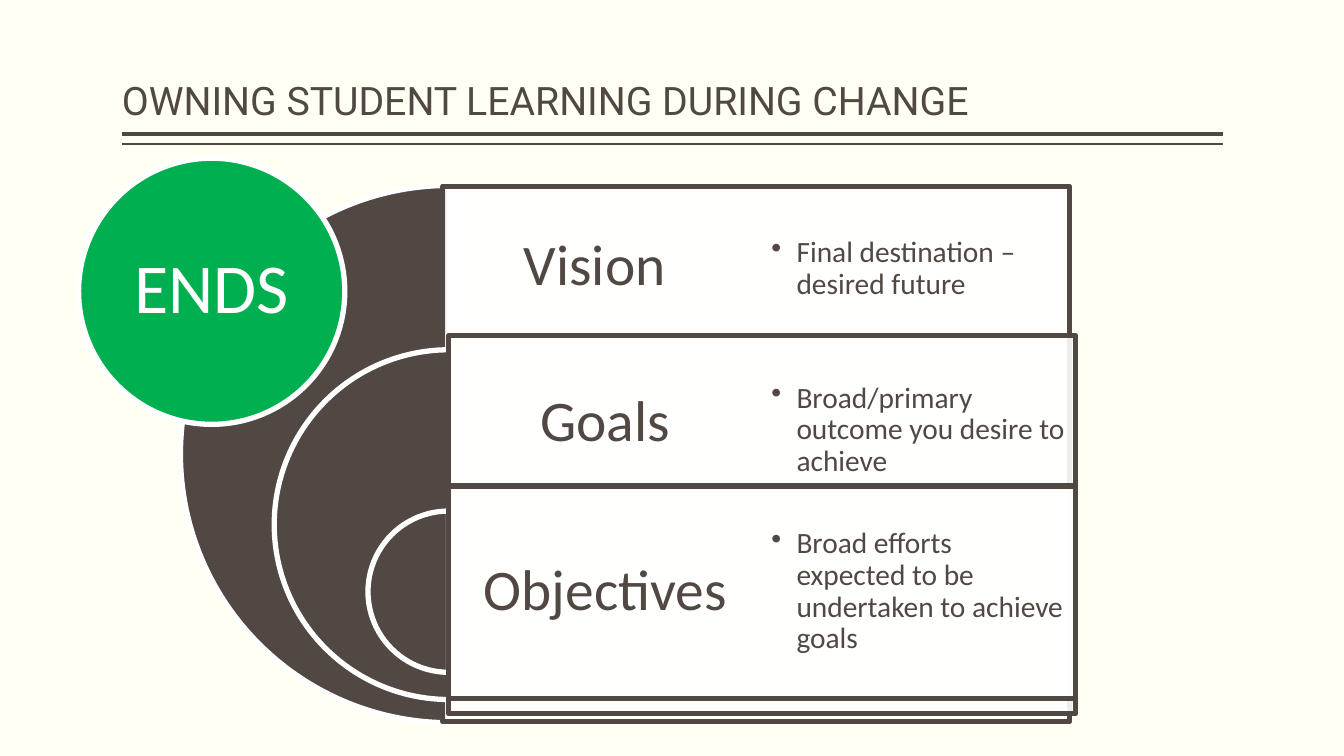
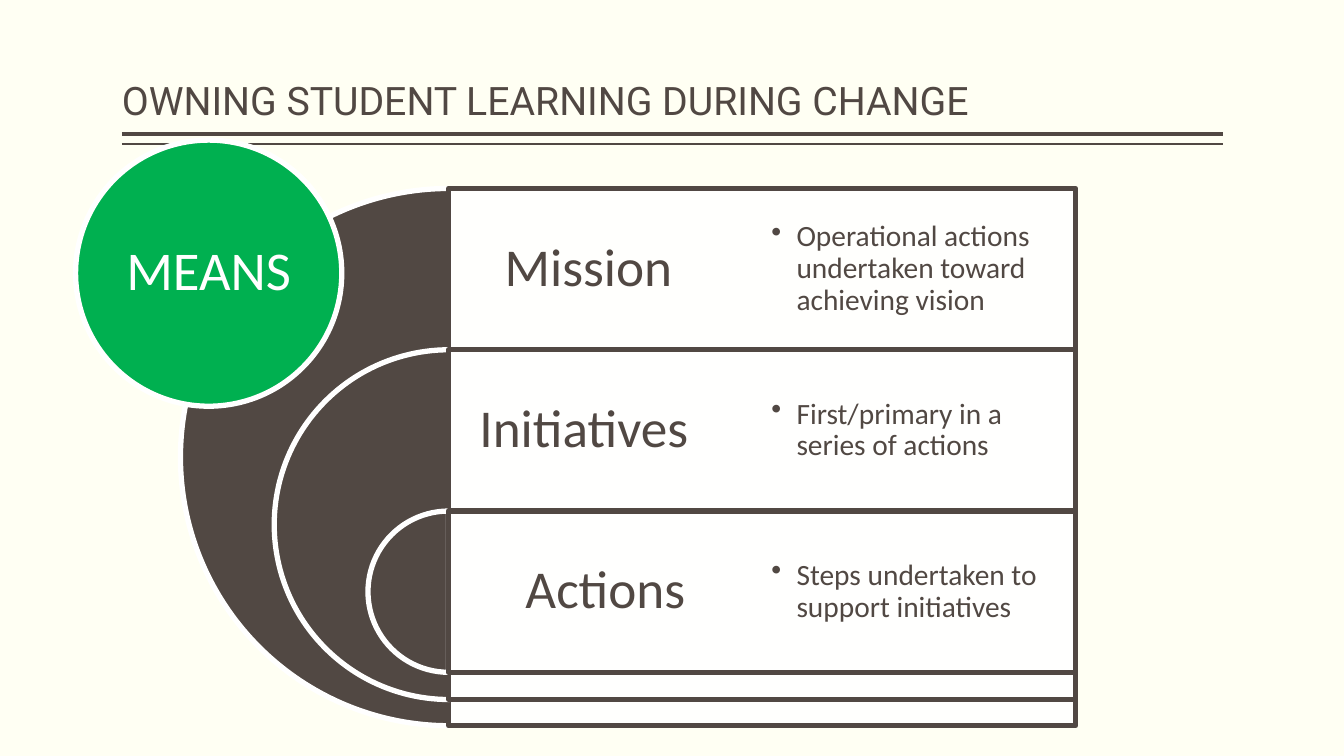
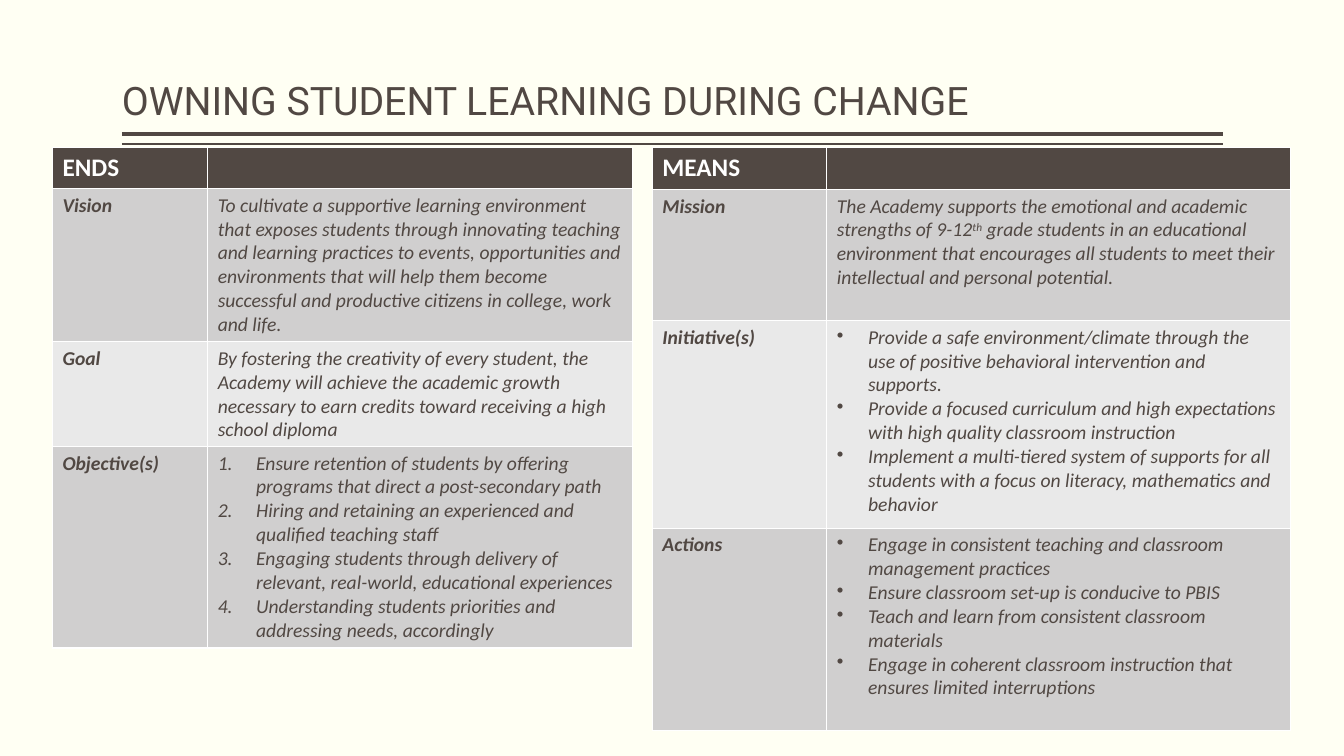
from lxml import etree
from pptx import Presentation
from pptx import util as u
from pptx.dml.color import RGBColor
from pptx.enum import shapes, text
from pptx.oxml.ns import qn

PX = 9144  # 100 px to the inch
CREAM = RGBColor(0xFF, 0xFF, 0xF3)
BROWN = RGBColor(0x51, 0x48, 0x43)
WHITE = RGBColor(0xFF, 0xFF, 0xFF)
GREEN = RGBColor(0x00, 0xB0, 0x50)
DARK = RGBColor(0xD0, 0xCF, 0xCF)
LIGHT = RGBColor(0xE9, 0xE9, 0xE9)

TITLE = "OWNING STUDENT LEARNING DURING CHANGE"
LEFT, RIGHT = 121, 1213
EDGE = 3.78
DOT = ("buChar", {"char": "•"})
NUM = ("buAutoNum", {"type": "arabicPeriod"})
SHAPE = shapes.MSO_SHAPE
ALIGN = text.PP_ALIGN
ANCHOR = text.MSO_ANCHOR

# Wheel geometry: nested pies that share a right-hand centre line
AXIS, TOP, STEP = 445, 187, 160
SIZES = (533, 347, 160)
WIDE, HALF = 622, 311


def px(*nums):
    return [u.Emu(n * PX) for n in nums]


def put(obj, vals):
    for key, val in vals.items():
        setattr(obj, key, val)


def style(size, color=BROWN, name="Calibri", **more):
    return {"size": u.Pt(size), "color": color, "name": name, **more}


def bullet(par, mark, gap):
    props = par._p.get_or_add_pPr()
    props.set("marL", str(gap * PX))
    props.set("indent", str(-gap * PX))
    tag, attrs = mark
    etree.SubElement(props, qn("a:" + tag), attrs)


def write(frame, lines, font, para=None, mark=None, gap=0):
    """Fill a frame; text between two ^ signs is superscript."""
    font = dict(font)
    color = font.pop("color")
    for i, line in enumerate(lines):
        par = frame.paragraphs[0] if i == 0 else frame.add_paragraph()
        put(par, para or {})
        if mark:
            bullet(par, mark, gap)
        for j, part in enumerate(line.split("^")):
            run = par.add_run()
            run.text = part
            put(run.font, font)
            run.font.color.rgb = color
            if j % 2:
                run._r.get_or_add_rPr().set("baseline", "30000")


def frame_of(shape, side, edge, anchor):
    frame = shape.text_frame
    put(frame, {"word_wrap": True, "vertical_anchor": anchor})
    put(frame, dict(zip(("margin_left", "margin_right", "margin_top", "margin_bottom"),
                        px(side, side, edge, edge))))
    return frame


def label(slide, box, lines, font, pad=(0, 5), anchor=ANCHOR.MIDDLE, align=ALIGN.LEFT, **more):
    shape = slide.shapes.add_textbox(*px(*box))
    write(frame_of(shape, *pad, anchor), lines, font,
          {"alignment": align, "line_spacing": 0.9}, **more)


def block(slide, kind, box, fill, line, alpha=None):
    shape = slide.shapes.add_shape(kind, *px(*box))
    shape.shadow.inherit = False
    shape.fill.solid()
    shape.fill.fore_color.rgb = fill
    shape.line.color.rgb = line
    shape.line.width = u.Pt(EDGE)
    if alpha:
        color = shape._element.spPr.find(qn("a:solidFill"))[0]
        etree.SubElement(color, qn("a:alpha"), val=str(alpha * 1000))
    return shape


def rule(slide, y, width):
    line = slide.shapes.add_connector(shapes.MSO_CONNECTOR.STRAIGHT, *px(LEFT, y, RIGHT, y))
    line.line.color.rgb = BROWN
    line.line.width = u.Pt(width)
    etree.SubElement(line._element.spPr, qn("a:effectLst"))


def page(deck):
    """New slide with the shared double rule and title."""
    slide = deck.slides.add_slide(deck.slide_layouts[6])
    rule(slide, 133, 3)
    rule(slide, 143, 1)
    label(slide, (LEFT, 8, RIGHT - LEFT, 120), [TITLE], style(28, name="Roboto"),
          anchor=ANCHOR.BOTTOM)
    return slide


def wheel(slide, rows, size, pad, lift=0):
    """Nested half discs, each with a panel, a heading and a note."""
    for i, (head, _, (x, y, high, tall)) in enumerate(rows):
        disc = SIZES[i]
        top = TOP + i * STEP - (0 if i else lift)
        pie = block(slide, SHAPE.PIE, (AXIS - disc // 2, top, disc, disc), BROWN, WHITE)
        pie.adjustments[0], pie.adjustments[1] = 54, 162
        block(slide, SHAPE.RECTANGLE, (x, y, WIDE, high), WHITE, BROWN, alpha=90)
        label(slide, (x, y, HALF, tall), [head], style(size), (pad, pad), align=ALIGN.CENTER)
    for i, (_, note, _) in enumerate(rows):
        label(slide, (AXIS + HALF, TOP + i * STEP, HALF, STEP), [note], style(21), (9, 9),
              mark=DOT, gap=25)


def badge(slide, x, y, word, size, pad):
    disc = block(slide, SHAPE.OVAL, (x, y, 264, 264), GREEN, WHITE)
    write(frame_of(disc, pad, pad, ANCHOR.MIDDLE), [word], style(size, WHITE),
          {"alignment": ALIGN.CENTER, "line_spacing": 0.9})


def grid(slide, x, cols, highs, head, rows):
    """Two-column table: bold names on the left, details on the right."""
    box = px(x, 146, sum(cols), sum(highs))
    table = slide.shapes.add_table(len(highs), 2, *box).table
    for col, wide in zip(table.columns, px(*cols)):
        col.width = wide
    for row, high in zip(table.rows, px(*highs)):
        row.height = high
    fills = (BROWN, DARK, LIGHT, DARK)
    for row, fill in zip(table.rows, fills):
        for cell in row.cells:
            cell.fill.solid()
            cell.fill.fore_color.rgb = fill
    write(table.cell(0, 0).text_frame, [head], style(18, WHITE, bold=True))
    for i, (name, lines, mark, gap) in enumerate(rows, 1):
        write(table.cell(i, 0).text_frame, [name], style(14, bold=True, italic=True))
        write(table.cell(i, 1).text_frame, lines, style(14, bold=False, italic=True),
              mark=mark, gap=gap)


# Content: heading, note, panel (left, top, height, heading height)
ENDS = [
    ("Vision\t", "Final destination – desired future", (439, 185, 531, 159)),
    ("Goals", "Broad/primary outcome you desire to achieve", (445, 333, 375, 173)),
    ("Objectives", "Broad efforts expected to be undertaken to achieve goals",
     (445, 482, 211, 211)),
]
MEANS = [
    (head, note, (AXIS, TOP + i * STEP, SIZES[i], STEP))
    for i, (head, note) in enumerate([
        ("Mission\t", "Operational actions undertaken toward achieving vision"),
        ("Initiatives\t", "First/primary in a series of actions"),
        ("Actions", "Steps undertaken to support initiatives"),
    ])
]
# Table rows: name, lines, list mark, indent
END_ROWS = [
    ("Vision", ["To cultivate a supportive learning environment that exposes students through "
                "innovating teaching and learning practices to events, opportunities and "
                "environments that will help them become successful and productive citizens in "
                "college, work and life."], None, 0),
    ("Goal", ["By fostering the creativity of every student, the Academy will achieve the "
              "academic growth necessary to earn credits toward receiving a high school "
              "diploma"], None, 0),
    ("Objective(s)", [
        "Ensure retention of students by offering programs that direct a post-secondary path",
        "Hiring and retaining an experienced and qualified teaching staff",
        "Engaging students through delivery of relevant, real-world, educational experiences",
        "Understanding students priorities and addressing needs, accordingly"], NUM, 38),
]
MEAN_ROWS = [
    ("Mission", ["The Academy supports the emotional and academic strengths of 9-12^th^ grade "
                 "students in an educational environment that encourages all students to meet "
                 "their intellectual and personal potential."], None, 0),
    ("Initiative(s)", [
        "Provide a safe environment/climate through the use of positive behavioral "
        "intervention and supports.",
        "Provide a focused curriculum and high expectations with high quality classroom "
        "instruction",
        "Implement a multi-tiered system of supports for all students with a focus on "
        "literacy, mathematics and behavior"], DOT, 31),
    ("Actions", [
        "Engage in consistent teaching and classroom management practices",
        "Ensure classroom set-up is conducive to PBIS",
        "Teach and learn from consistent classroom materials",
        "Engage in coherent classroom instruction that ensures limited interruptions"], DOT, 31),
]


def main():
    deck = Presentation()
    deck.slide_width, deck.slide_height = px(1333, 750)
    back = deck.slide_master.background.fill
    back.solid()
    back.fore_color.rgb = CREAM

    # Ends
    slide = page(deck)
    wheel(slide, ENDS, 41, 17, lift=3)
    badge(slide, 78, 157, "ENDS", 50, 7)

    # Means
    slide = page(deck)
    wheel(slide, MEANS, 38, 16)
    badge(slide, 75, 139, "MEANS", 39, 5)

    # Both, side by side
    slide = page(deck)
    grid(slide, 52, (154, 421), (41, 152, 104, 200), "ENDS", END_ROWS)
    grid(slide, 647, (173, 460), (42, 130, 206, 201), "MEANS", MEAN_ROWS)

    deck.save("out.pptx")


if __name__ == "__main__":
    main()
